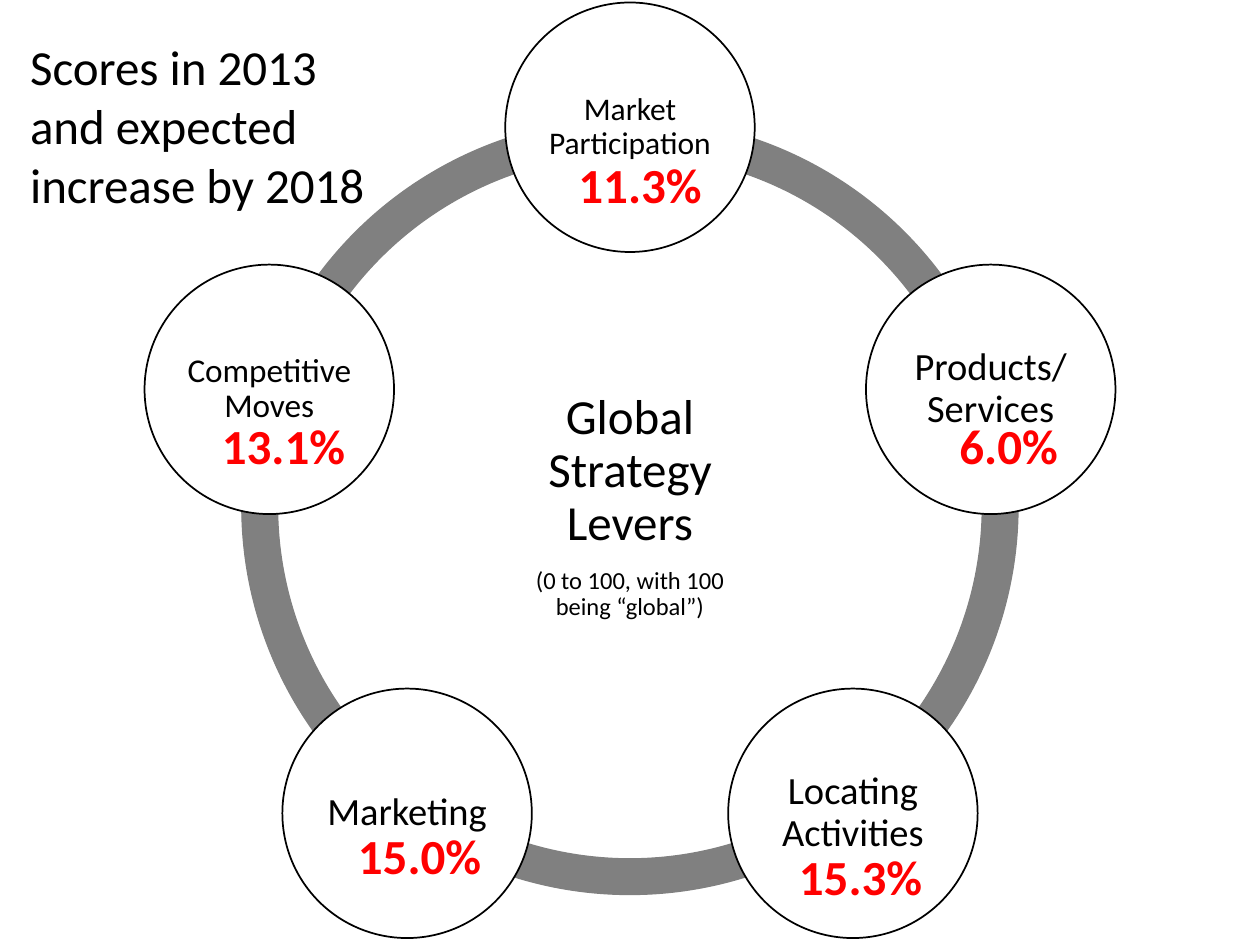
import math

from pptx import Presentation
from pptx import util as u
from pptx.dml.color import RGBColor
from pptx.enum import shapes, text

BLACK = RGBColor(0x00, 0x00, 0x00)
WHITE = RGBColor(0xFF, 0xFF, 0xFF)
GRAY = RGBColor(0x80, 0x80, 0x80)
RED = RGBColor(0xFF, 0x00, 0x00)

CENTER_X, CENTER_Y = 5, 4.02
ORBIT = 3.01
RING_SIZE = 6.16
LEVER_SIZE = 1.98
LABEL_SIZE = 1.4
SCORE_HEIGHT = 0.57

# Clockwise from the top: label, label size, score, score left, top, width
LEVERS = [
    ("Market Participation", 18, "11.3%", 4.33, 1.18, 1.5),
    ("Products/ Services", 22, "6.0%", 7.42, 3.25, 1.17),
    ("Locating Activities", 22, "15.3%", 6.08, 6.67, 1.5),
    ("Marketing", 22, "15.0%", 2.58, 6.5, 1.5),
    ("Competitive Moves", 19, "13.1%", 1.5, 3.25, 1.5),
]
STEP = 360 / len(LEVERS)


def square(x, y, size):
    """Left, top, width and height of a square centred on x, y."""
    return [u.Inches(v) for v in (x - size / 2, y - size / 2, size, size)]


def add_solid(slide, preset, box, fill, line, line_width):
    solid = slide.shapes.add_shape(preset, *box)
    solid.shadow.inherit = False
    solid.fill.solid()
    solid.fill.fore_color.rgb = fill
    solid.line.color.rgb = line
    solid.line.width = u.Pt(line_width)
    return solid


def add_ring_segment(slide, start):
    segment = add_solid(slide, shapes.MSO_SHAPE.BLOCK_ARC,
                        square(CENTER_X, CENTER_Y, RING_SIZE), GRAY, GRAY, 0.75)
    # Angles are held in 60000ths of a degree, scaled down by 100000
    segment.adjustments[0] = start % 360 * 0.6
    segment.adjustments[1] = (start + STEP) % 360 * 0.6
    segment.adjustments[2] = 0.046


def add_text(slide, box, lines, color=BLACK, bold=None, inset=None,
             align=text.PP_ALIGN.CENTER, spacing=None, gap=None):
    """Write (wording, size) lines, one paragraph each."""
    frame = slide.shapes.add_textbox(*box).text_frame
    frame.word_wrap = True
    if inset is not None:
        frame.vertical_anchor = text.MSO_ANCHOR.MIDDLE
        for side in ("left", "top", "right", "bottom"):
            setattr(frame, f"margin_{side}", u.Inches(inset))
    for index, (wording, size) in enumerate(lines):
        paragraph = frame.add_paragraph() if index else frame.paragraphs[0]
        paragraph.alignment = align
        paragraph.line_spacing = spacing
        if index and gap:
            paragraph.space_before = u.Pt(gap)
        run = paragraph.add_run()
        run.text = wording
        run.font.color.rgb = color
        for name, value in {"name": "Calibri", "size": u.Pt(size), "bold": bold}.items():
            setattr(run.font, name, value)


def add_lever(slide, angle, label, size):
    x = CENTER_X + ORBIT * math.cos(math.radians(angle))
    y = CENTER_Y + ORBIT * math.sin(math.radians(angle))
    add_solid(slide, shapes.MSO_SHAPE.OVAL, square(x, y, LEVER_SIZE), WHITE, BLACK, 1)
    add_text(slide, square(x, y, LABEL_SIZE), [(label, size)], inset=0.03, spacing=0.9)


def main():
    deck = Presentation()
    deck.slide_width, deck.slide_height = u.Inches(10), u.Inches(7.5)
    slide = deck.slides.add_slide(deck.slide_layouts[6])

    angles = [270 + STEP * index for index in range(len(LEVERS))]
    for angle in angles:
        add_ring_segment(slide, angle)
    add_text(slide, square(CENTER_X, CENTER_Y, 2),
             [("Global Strategy Levers", 28), ("(0 to 100, with 100 being “global”)", 14)],
             inset=0.04, spacing=0.9, gap=9.8)
    for angle, (label, size, *_) in zip(angles, LEVERS):
        add_lever(slide, angle, label, size)
    for _, _, score, left, top, width in LEVERS:
        box = [u.Inches(v) for v in (left, top, width, SCORE_HEIGHT)]
        add_text(slide, box, [(score, 28)], color=RED, bold=True)
    add_text(slide, [u.Inches(v) for v in (0.14, 0.24, 3.69, 1.51)],
             [("Scores in 2013", 28), ("and expected increase by 2018", 28)],
             align=text.PP_ALIGN.LEFT)

    deck.save("out.pptx")


if __name__ == "__main__":
    main()
